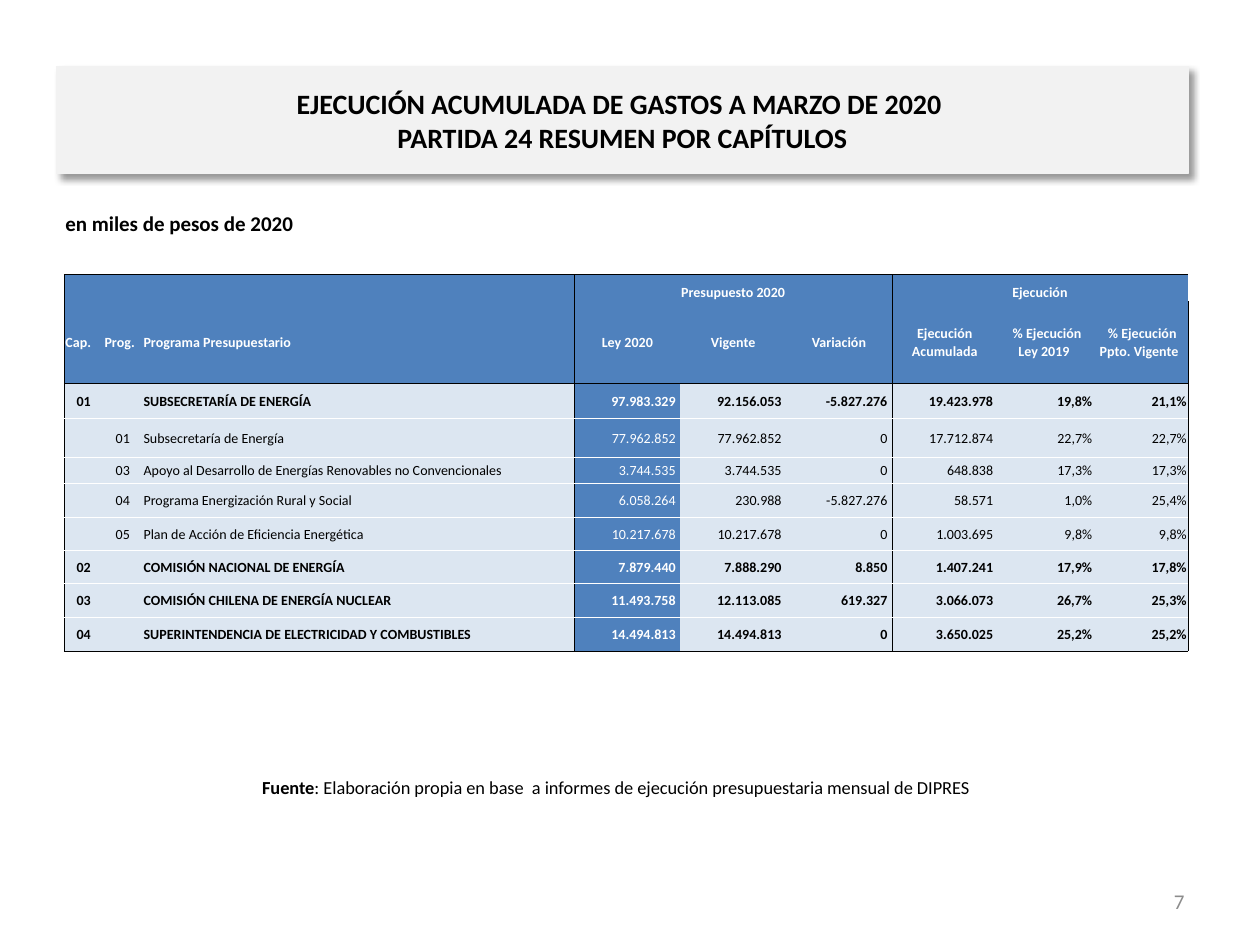
from dataclasses import dataclass

import pptx
import pptx.dml.color
import pptx.enum.text
import pptx.oxml
import pptx.oxml.ns
import pptx.util

COLORS = {
    "black": "000000",
    "white": "FFFFFF",
    "header": "4F81BD",
    "body": "DCE6F1",
    "banner": "F2F2F2",
    "page": "8C8C8C",
}
FONT = "Calibri"
ALIGN = pptx.enum.text.PP_ALIGN
ANCHOR = pptx.enum.text.MSO_ANCHOR
SLIDE_WIDTH = pptx.util.Inches(10)
SLIDE_HEIGHT = pptx.util.Inches(7.5)

# Shares of the slide's width and height, in percent
COLUMN_SHARES = [3.1, 3.1, 34.3, 8.4, 8.4, 8.4, 8.4, 7.6, 7.5]
ROW_SHARES = [2.8, 8.67, 3.73, 4.1, 2.8, 3.6, 3.5, 3.5, 3.55, 3.6]

GROUP_STARTS = (0, 3, 6)
GROUP_ENDS = (2, 5, 8)
GROUP_TITLES = {3: "Presupuesto 2020", 6: "Ejecución"}
HEADERS = [
    "Cap.", "Prog.", "Programa Presupuestario",
    "Ley 2020", "Vigente", "Variación",
    "Ejecución Acumulada", " % Ejecución Ley 2019 ", " % Ejecución Ppto. Vigente ",
]
HEADER_ROWS = 2
LAW_COLUMN = 3


@dataclass
class Box:
    """A rectangle in percent of the slide's size."""
    left: float
    top: float
    width: float
    height: float

    def lengths(self) -> tuple[int, int, int, int]:
        return (across(self.left), down(self.top), across(self.width), down(self.height))


@dataclass
class BudgetLine:
    chapter: str
    program: str
    name: str
    amounts: tuple[str, str, str, str]
    percents: tuple[str, str]

    def texts(self) -> list[str]:
        padded = [f"{amount} " for amount in self.amounts]
        return [self.chapter, self.program, self.name, *padded, *self.percents]


@dataclass
class Style:
    size: float
    color: str = "black"
    bold: bool = False
    align: ALIGN = ALIGN.LEFT


BUDGET_LINES = [
    BudgetLine("01", "", "SUBSECRETARÍA DE ENERGÍA",
               ("97.983.329", "92.156.053", "-5.827.276", "19.423.978"), ("19,8%", "21,1%")),
    BudgetLine("", "01", "Subsecretaría de Energía",
               ("77.962.852", "77.962.852", "0", "17.712.874"), ("22,7%", "22,7%")),
    BudgetLine("", "03", "Apoyo al Desarrollo de Energías Renovables no Convencionales",
               ("3.744.535", "3.744.535", "0", "648.838"), ("17,3%", "17,3%")),
    BudgetLine("", "04", "Programa Energización Rural y Social",
               ("6.058.264", "230.988", "-5.827.276", "58.571"), ("1,0%", "25,4%")),
    BudgetLine("", "05", "Plan de Acción de Eficiencia Energética",
               ("10.217.678", "10.217.678", "0", "1.003.695"), ("9,8%", "9,8%")),
    BudgetLine("02", "", "COMISIÓN NACIONAL DE ENERGÍA",
               ("7.879.440", "7.888.290", "8.850", "1.407.241"), ("17,9%", "17,8%")),
    BudgetLine("03", "", "COMISIÓN CHILENA DE ENERGÍA NUCLEAR",
               ("11.493.758", "12.113.085", "619.327", "3.066.073"), ("26,7%", "25,3%")),
    BudgetLine("04", "", "SUPERINTENDENCIA DE ELECTRICIDAD Y COMBUSTIBLES",
               ("14.494.813", "14.494.813", "0", "3.650.025"), ("25,2%", "25,2%")),
]
LAST_ROW = HEADER_ROWS + len(BUDGET_LINES) - 1


def across(percent: float) -> int:
    return round(SLIDE_WIDTH * percent / 100)


def down(percent: float) -> int:
    return round(SLIDE_HEIGHT * percent / 100)


def rgb(color: str) -> pptx.dml.color.RGBColor:
    return pptx.dml.color.RGBColor.from_string(COLORS[color])


def drawing_xml(markup: str):
    """Parse one DrawingML element whose start tag holds {ns}."""
    return pptx.oxml.parse_xml(markup.replace("{ns}", pptx.oxml.ns.nsdecls("a")))


def format_paragraph(paragraph, style: Style) -> None:
    paragraph.alignment = style.align
    for run in paragraph.runs:
        run.font.name = FONT
        run.font.size = pptx.util.Pt(style.size)
        run.font.bold = style.bold
        run.font.color.rgb = rgb(style.color)


def add_text(slide, box: Box, text: str, style: Style, anchor=ANCHOR.TOP):
    frame = slide.shapes.add_textbox(*box.lengths()).text_frame
    frame.word_wrap = True
    frame.vertical_anchor = anchor
    frame.text = text
    format_paragraph(frame.paragraphs[0], style)
    return frame.paragraphs[0]


def fill_title(slide, box: Box, text: str) -> None:
    title = slide.shapes.title
    title.left, title.top, title.width, title.height = box.lengths()
    title.fill.solid()
    title.fill.fore_color.rgb = rgb("banner")
    title.line.color.rgb = rgb("banner")
    title.line.width = pptx.util.Pt(0.75)
    title._element.spPr.append(drawing_xml(
        '<a:effectLst {ns}><a:outerShdw blurRad="50800" dist="38100" dir="2700000" algn="tl" '
        f'rotWithShape="0"><a:srgbClr val="{COLORS["black"]}"><a:alpha val="40000"/>'
        '</a:srgbClr></a:outerShdw></a:effectLst>'))
    title.text_frame.vertical_anchor = ANCHOR.MIDDLE
    title.text_frame.paragraphs[0].text = text
    format_paragraph(title.text_frame.paragraphs[0], Style(16, bold=True, align=ALIGN.CENTER))


def border_colors(row: int, column: int) -> dict[str, str | None]:
    """Black around the header, the body and each column group; white between body rows."""
    rule = "white" if row >= HEADER_ROWS else None
    header_end = HEADER_ROWS - 1
    return {
        "lnL": "black" if column in GROUP_STARTS else None,
        "lnR": "black" if column in GROUP_ENDS else None,
        "lnT": "black" if row in (0, HEADER_ROWS) else rule,
        "lnB": "black" if row in (header_end, LAST_ROW) else rule,
    }


def set_borders(cell, colors: dict[str, str | None]) -> None:
    properties = cell._tc.get_or_add_tcPr()
    for tag, color in colors.items():
        paint = (f'<a:solidFill><a:srgbClr val="{COLORS[color]}"/></a:solidFill>'
                 if color else "<a:noFill/>")
        properties.append(drawing_xml(f'<a:{tag} {{ns}} w="6350">{paint}</a:{tag}>'))


def cell_style(row: int, column: int) -> Style:
    if row < HEADER_ROWS:
        align = ALIGN.CENTER if column >= LAW_COLUMN else ALIGN.LEFT
        return Style(8, "white", True, align)
    align = ALIGN.RIGHT
    if column < LAW_COLUMN:
        align = ALIGN.JUSTIFY if column == 2 else ALIGN.CENTER
    is_chapter = bool(BUDGET_LINES[row - HEADER_ROWS].chapter)
    return Style(8, "white" if column == LAW_COLUMN else "black", is_chapter, align)


def fill_cell(cell, row: int, column: int, text: str) -> None:
    set_borders(cell, border_colors(row, column))
    cell.fill.solid()
    cell.fill.fore_color.rgb = rgb(
        "header" if row < HEADER_ROWS or column == LAW_COLUMN else "body")
    cell.margin_left = cell.margin_right = cell.margin_top = pptx.util.Inches(0.01)
    cell.margin_bottom = 0
    cell.vertical_anchor = ANCHOR.BOTTOM if row == 0 else ANCHOR.MIDDLE
    paragraph = cell.text_frame.paragraphs[0]
    paragraph.text = text
    format_paragraph(paragraph, cell_style(row, column))
    if not text:
        paragraph._p.append(drawing_xml('<a:endParaRPr {ns} sz="800"/>'))


def add_budget_table(slide, left: float, top: float) -> None:
    group_row = [GROUP_TITLES.get(column, "") for column in range(len(HEADERS))]
    rows = [group_row, HEADERS, *(line.texts() for line in BUDGET_LINES)]
    box = Box(left, top, sum(COLUMN_SHARES), sum(ROW_SHARES))
    table = slide.shapes.add_table(len(rows), len(HEADERS), *box.lengths()).table
    table.first_row = table.horz_banding = False
    for column, share in zip(table.columns, COLUMN_SHARES):
        column.width = across(share)
    for row, share in zip(table.rows, ROW_SHARES):
        row.height = down(share)
    for row, texts in enumerate(rows):
        for column, text in enumerate(texts):
            fill_cell(table.cell(row, column), row, column, text)
    for start in GROUP_TITLES:
        table.cell(0, start).merge(table.cell(0, start + 2))


def main() -> None:
    presentation = pptx.Presentation()
    presentation.slide_width, presentation.slide_height = SLIDE_WIDTH, SLIDE_HEIGHT
    slide = presentation.slides.add_slide(presentation.slide_layouts[5])
    add_text(slide, Box(71.7, 92.67, 23.3, 5.33), "7",
             Style(12, "page", align=ALIGN.RIGHT), ANCHOR.MIDDLE)
    source = add_text(
        slide, Box(4.2, 81.47, 89.4, 3.87),
        "Fuente", Style(10.5, bold=True, align=ALIGN.CENTER))
    source.add_run().text = (
        ": Elaboración propia en base  a informes de ejecución presupuestaria mensual de DIPRES")
    format_paragraph(source, Style(10.5, align=ALIGN.CENTER))
    source.runs[0].font.bold = True
    add_text(slide, Box(4.2, 21.6, 75, 4.93), "en miles de pesos de 2020", Style(12, bold=True))
    fill_title(slide, Box(4.5, 7.07, 89.8, 11.33),
               "EJECUCIÓN ACUMULADA DE GASTOS A MARZO DE 2020 \vPARTIDA 24 RESUMEN POR CAPÍTULOS")
    add_budget_table(slide, 5.1, 29.07)
    presentation.save("out.pptx")


if __name__ == "__main__":
    main()
